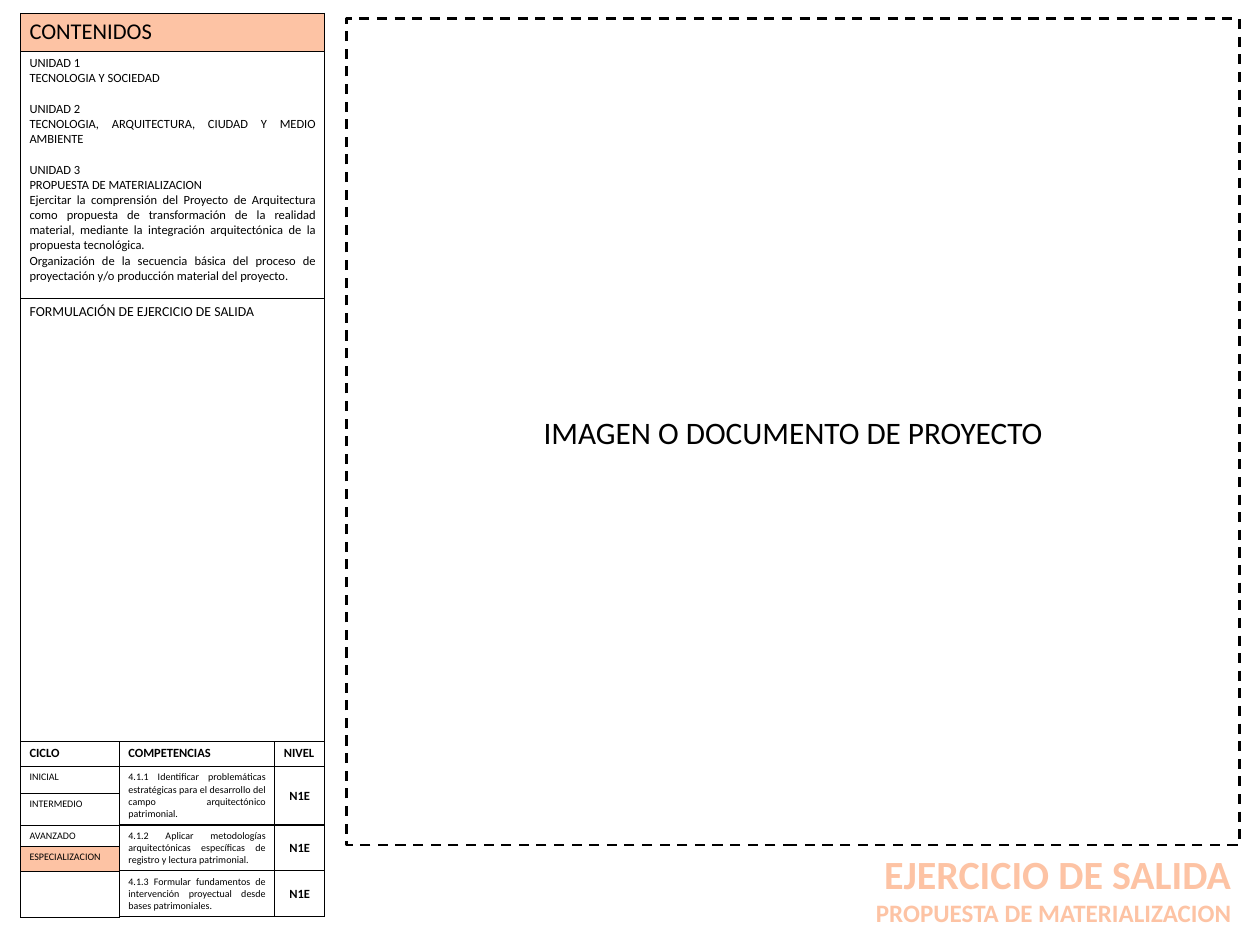
from dataclasses import dataclass

from lxml.etree import SubElement
from pptx import Presentation
from pptx.dml.color import RGBColor
from pptx.enum.dml import MSO_LINE
from pptx.enum.shapes import MSO_SHAPE
from pptx.enum.text import MSO_ANCHOR, PP_ALIGN
from pptx.oxml.ns import qn
from pptx.util import Cm, Pt

FONT = "Calibri"
BLACK, PEACH = "000000", "FDC3A4"


@dataclass
class Para:
    text: str
    size: float
    bold: bool = False
    align: PP_ALIGN = PP_ALIGN.JUSTIFY
    before: float = 0
    color: str = BLACK


@dataclass
class Entry:
    row: int
    col: int
    paras: list[Para]
    rows: int = 1
    cols: int = 1
    fill: str | None = None
    anchor: MSO_ANCHOR = MSO_ANCHOR.TOP


def rgb(color: str) -> RGBColor:
    return RGBColor.from_string(color)


def write(tf, paras: list[Para]) -> None:
    for i, para in enumerate(paras):
        p = tf.add_paragraph() if i else tf.paragraphs[0]
        p.text = para.text
        p.alignment = para.align
        p.space_before = Pt(para.before)
        p.font.name = FONT
        p.font.size = Pt(para.size)
        p.font.bold = para.bold
        p.font.color.rgb = rgb(para.color)


def set_border(cell, side: str, width: float) -> None:
    ln = SubElement(cell._tc.get_or_add_tcPr(), qn(f"a:ln{side}"), w=str(Pt(width)))
    SubElement(SubElement(ln, qn("a:solidFill")), qn("a:srgbClr"), val=BLACK)


def fill_entry(table, entry: Entry) -> None:
    cell = table.cell(entry.row, entry.col)
    if entry.rows * entry.cols > 1:
        cell.merge(table.cell(entry.row + entry.rows - 1, entry.col + entry.cols - 1))
    cell.vertical_anchor = entry.anchor
    if entry.fill:
        cell.fill.solid()
        cell.fill.fore_color.rgb = rgb(entry.fill)
    write(cell.text_frame, entry.paras)


# Table contents
UNITS = [
    Para("UNIDAD 1", 10),
    Para("TECNOLOGIA Y SOCIEDAD", 10),
    Para("UNIDAD 2", 10, before=12.2),
    Para("TECNOLOGIA, ARQUITECTURA, CIUDAD Y MEDIO AMBIENTE", 10),
    Para("UNIDAD 3", 10, before=12.2),
    Para("PROPUESTA DE MATERIALIZACION", 10),
    Para("Ejercitar la comprensión del Proyecto de Arquitectura como propuesta de "
         "transformación de la realidad material, mediante la integración "
         "arquitectónica de la propuesta tecnológica.", 10),
    Para("Organización de la secuencia básica del proceso de proyectación y/o "
         "producción material del proyecto.", 10),
]
ENTRIES = [
    Entry(0, 0, [Para("CONTENIDOS", 18)], cols=3, fill=PEACH),
    Entry(1, 0, UNITS, cols=3),
    Entry(2, 0, [Para("FORMULACIÓN DE EJERCICIO DE SALIDA", 11)], cols=3),
]
for col, heading in enumerate(["CICLO", "COMPETENCIAS", "NIVEL"]):
    ENTRIES.append(Entry(3, col, [Para(heading, 10, bold=True)]))

CYCLES = ["INICIAL", "INTERMEDIO", "AVANZADO", "ESPECIALIZACION", ""]
for row, cycle in enumerate(CYCLES, start=4):
    fill = PEACH if cycle == "ESPECIALIZACION" else None
    ENTRIES.append(Entry(row, 0, [Para(cycle, 8)], fill=fill))

SKILLS = [
    (4, 2, 0, "4.1.1 Identificar problemáticas estratégicas para el desarrollo "
              "del campo arquitectónico patrimonial."),
    (6, 2, 0, "4.1.2 Aplicar metodologías arquitectónicas específicas de "
              "registro y lectura patrimonial."),
    (8, 1, 6, "4.1.3 Formular fundamentos de intervención proyectual desde "
              "bases patrimoniales."),
]
for row, span, before, skill in SKILLS:
    level = Para("N1E", 10, bold=True, align=PP_ALIGN.CENTER)
    ENTRIES.append(Entry(row, 1, [Para(skill, 8, before=before)], rows=span))
    ENTRIES.append(Entry(row, 2, [level], rows=span, anchor=MSO_ANCHOR.MIDDLE))

COL_WIDTHS = [2.79, 4.39, 1.4]
ROW_HEIGHTS = [1.07, 6.98, 12.5, 0.71, 0.74, 0.87, 0.61, 0.65, 1.27]
# Cells whose lower edge is a thin line
THIN = {(1, col) for col in range(3)} | {(row, 0) for row in range(4, 9)}


def add_contents_table(s) -> None:
    frame = s.shapes.add_table(len(ROW_HEIGHTS), len(COL_WIDTHS), Cm(0.58), Cm(0.38),
                               Cm(sum(COL_WIDTHS)), Cm(sum(ROW_HEIGHTS)))
    table = frame.table
    table.first_row = table.horz_banding = False
    for column, width in zip(table.columns, COL_WIDTHS):
        column.width = Cm(width)
    for row, height in zip(table.rows, ROW_HEIGHTS):
        row.height = Cm(height)
    for r in range(len(ROW_HEIGHTS)):
        for c in range(len(COL_WIDTHS)):
            cell = table.cell(r, c)
            set_border(cell, "L", 1)
            set_border(cell, "R", 1)
            set_border(cell, "T", 0.5 if (r - 1, c) in THIN else 1)
            set_border(cell, "B", 0.5 if (r, c) in THIN else 1)
            cell.fill.background()
    for entry in ENTRIES:
        fill_entry(table, entry)


def add_title(s) -> None:
    sp = s.shapes.add_textbox(Cm(11.15), Cm(23.85), Cm(23.85), Cm(2.49))
    sp.text_frame.word_wrap = True
    write(sp.text_frame, [
        Para("EJERCICIO DE SALIDA", 32, True, PP_ALIGN.RIGHT, color=PEACH),
        Para("PROPUESTA DE MATERIALIZACION", 20, True, PP_ALIGN.RIGHT, color=PEACH),
    ])


def add_project_frame(s) -> None:
    sp = s.shapes.add_shape(MSO_SHAPE.RECTANGLE, Cm(9.78), Cm(0.53), Cm(25.2), Cm(23.32))
    sp.shadow.inherit = False
    sp.fill.background()
    sp.line.color.rgb = rgb(BLACK)
    sp.line.width = Pt(2)
    sp.line.dash_style = MSO_LINE.DASH
    sp.text_frame.word_wrap = True
    sp.text_frame.vertical_anchor = MSO_ANCHOR.MIDDLE
    write(sp.text_frame, [Para("IMAGEN O DOCUMENTO DE PROYECTO", 25, align=PP_ALIGN.CENTER)])


def main() -> None:
    prs = Presentation()
    prs.slide_width, prs.slide_height = Cm(35.56), Cm(26.67)
    s = prs.slides.add_slide(prs.slide_layouts[6])
    add_contents_table(s)
    add_title(s)
    add_project_frame(s)
    prs.save("out.pptx")


if __name__ == "__main__":
    main()
